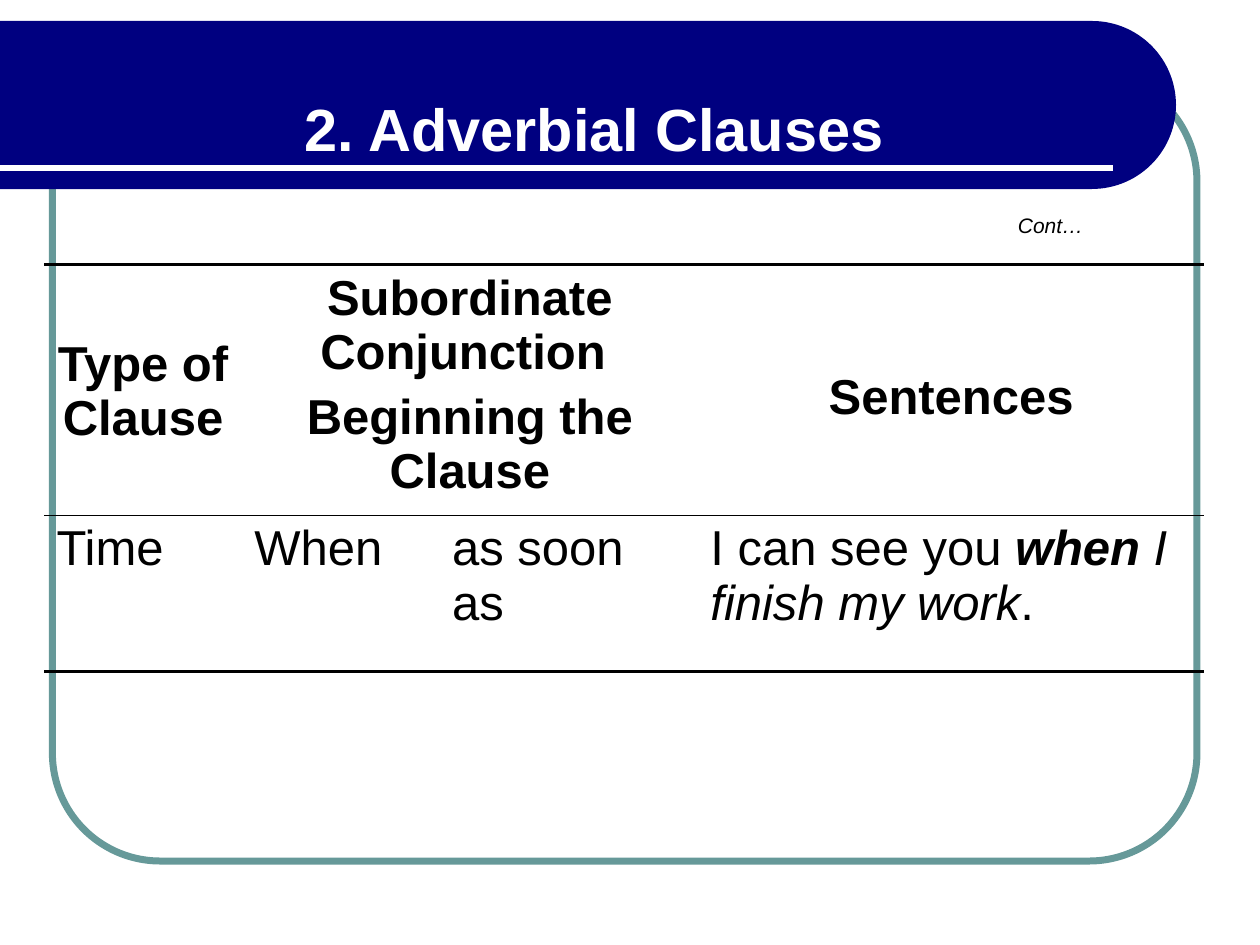
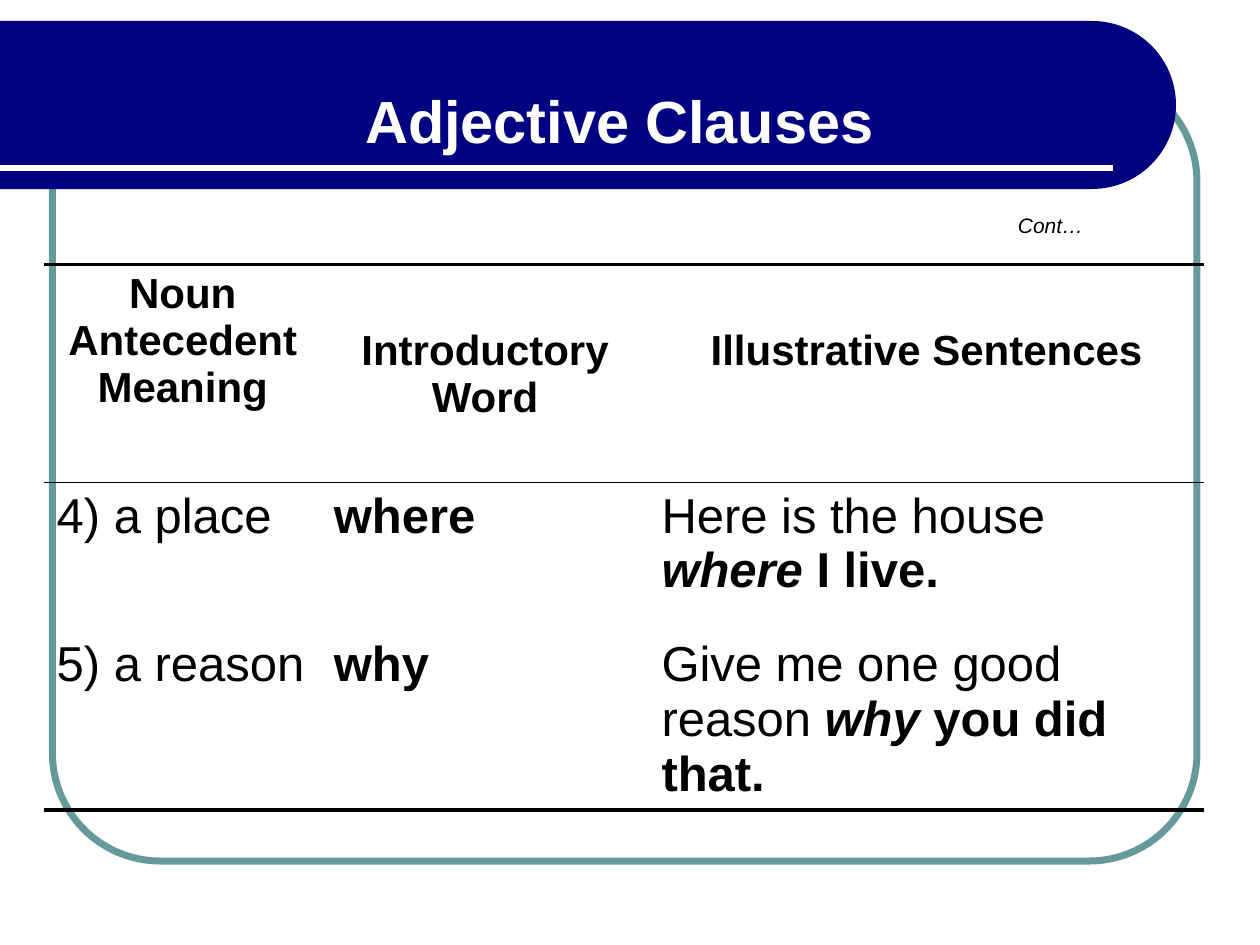
import math
import pptx
import pptx.util
import pptx.dml.color
import pptx.enum.shapes
import pptx.enum.text
import pptx.oxml
import pptx.oxml.ns

Pt = pptx.util.Pt
COLORS = {"band": "000080", "frame": "669999", "paper": "FFFFFF", "ink": "000000"}
RGB = {name: pptx.dml.color.RGBColor.from_string(value) for name, value in COLORS.items()}
FONT = "Arial"
THICK, THIN = 2.25, 1
CELL_MARGIN = 3.6
TABLE_LEFT, TABLE_TOP = 25.2, 151.2


def add_run(paragraph, text, size, color="ink", style=""):
    run = paragraph.add_run()
    run.text = text
    run.font.name = FONT
    run.font.size = Pt(size)
    run.font.bold = "b" in style
    run.font.italic = "i" in style
    run.font.color.rgb = RGB[color]


def border_xml(side, width):
    paint = "<a:noFill/>"
    if width:
        paint = f'<a:solidFill><a:srgbClr val="{COLORS["ink"]}"/></a:solidFill>'
    return pptx.oxml.parse_xml(
        f'<a:ln{side} {pptx.oxml.ns.nsdecls("a")} w="{Pt(width)}">{paint}</a:ln{side}>')


# Each cell: column, span, top offset, paragraphs of (text, style) runs
lessons = [
    {
        "title": "2. Adverbial Clauses", "title_box": (167, 49, 347, 48),
        "columns": [113, 113, 147.6, 289.4], "rows": [143.3, 89.3],
        "header_size": 28,
        "cells": [
            [(0, 1, 37.8, [[("Type of Clause", "b")]]),
             (1, 2, 0, [[("Subordinate Conjunction ", "b")],
                        [("Beginning the Clause", "b")]]),
             (3, 1, 57, [[("Sentences", "b")]])],
            [(0, 1, 0, [[("Time", "")]]),
             (1, 1, 0, [[("When", "")]]),
             (2, 1, 0, [[("as soon as", "")]]),
             (3, 1, 0, [[("I can see you ", ""), ("when ", "bi"),
                         ("I finish my work", "i"), (".", "")]])],
        ],
    },
    {
        "title": "Adjective Clauses", "title_box": (201.6, 44.6, 305.3, 48),
        "columns": [158.4, 187.2, 317.4], "rows": [124.6, 85, 102.2],
        "header_size": 24,
        "cells": [
            [(0, 1, 0, [[("Noun Antecedent Meaning", "b")]]),
             (1, 1, 32.4, [[("Introductory Word", "b")]]),
             (2, 1, 32.4, [[("Illustrative Sentences", "b")]])],
            [(0, 1, 0, [[("4) a place", "")]]),
             (1, 1, 0, [[("where", "b")]]),
             (2, 1, 0, [[("Here is the house ", ""), ("where ", "bi"), ("I live.", "b")]])],
            [(0, 1, 0, [[("5) a reason", "")]]),
             (1, 1, 0, [[("why", "b")]]),
             (2, 1, 0, [[("Give me one good reason ", ""), ("why ", "bi"),
                         ("you did that.", "b")]])],
        ],
    },
]

deck = pptx.Presentation()
deck.slide_width, deck.slide_height = Pt(720), Pt(540)

for lesson in lessons:
    slide = deck.slides.add_slide(deck.slide_layouts[6])
    slide.background.fill.solid()
    slide.background.fill.fore_color.rgb = RGB["paper"]

    # Rounded frame behind everything
    frame = slide.shapes.add_shape(pptx.enum.shapes.MSO_SHAPE.ROUNDED_RECTANGLE,
                                   Pt(30), Pt(42), Pt(654), Pt(450))
    frame.adjustments[0] = 0.137
    frame.shadow.inherit = False
    frame.fill.background()
    frame.line.color.rgb = RGB["frame"]
    frame.line.width = Pt(4)

    # Title band with a half-round right end
    radius, center_x, center_y = 48, 624, 60
    arc = [(center_x + radius * math.cos(math.radians(angle)),
            center_y + radius * math.sin(math.radians(angle)))
           for angle in range(-90, 91, 3)]
    outline = slide.shapes.build_freeform(0, Pt(center_y - radius))
    outline.add_line_segments([(Pt(x), Pt(y)) for x, y in arc]
                              + [(0, Pt(center_y + radius))], close=True)
    band = outline.convert_to_shape()
    band.shadow.inherit = False
    band.fill.solid()
    band.fill.fore_color.rgb = RGB["band"]
    band.line.fill.background()

    # Rule under the title
    rule = slide.shapes.add_connector(pptx.enum.shapes.MSO_CONNECTOR.STRAIGHT,
                                      0, Pt(96), Pt(636), Pt(96))
    rule.line.color.rgb = RGB["paper"]
    rule.line.width = Pt(3)
    rule._element.spPr.append(
        pptx.oxml.parse_xml(f'<a:effectLst {pptx.oxml.ns.nsdecls("a")}/>'))

    # Clause table
    columns, rows = lesson["columns"], lesson["rows"]
    clauses = slide.shapes.add_table(len(rows), len(columns), Pt(TABLE_LEFT), Pt(TABLE_TOP),
                                     Pt(sum(columns)), Pt(sum(rows))).table
    clauses.first_row = clauses.horz_banding = False
    for column, width in zip(clauses.columns, columns):
        column.width = Pt(width)
    for row, height in zip(clauses.rows, rows):
        row.height = Pt(height)

    for r, row_cells in enumerate(lesson["cells"]):
        size = lesson["header_size"] if r == 0 else 28
        for c, span, offset, paragraphs in row_cells:
            cell = clauses.cell(r, c)
            if span > 1:
                cell.merge(clauses.cell(r, c + span - 1))
            cell.margin_top = Pt(CELL_MARGIN + offset)
            for p, runs in enumerate(paragraphs):
                frame_text = cell.text_frame
                paragraph = frame_text.add_paragraph() if p else frame_text.paragraphs[0]
                if r == 0:
                    paragraph.alignment = pptx.enum.text.PP_ALIGN.CENTER
                paragraph.space_before = Pt(size * 0.2 if p else 0)
                for text, style in runs:
                    add_run(paragraph, text, size, style=style)

    # Horizontal borders only: thick outside, thin below the header
    edges = [THICK, THIN] + [0] * (len(rows) - 2) + [THICK]
    for r in range(len(rows)):
        for c in range(len(columns)):
            cell = clauses.cell(r, c)
            cell.fill.background()
            properties = cell._tc.get_or_add_tcPr()
            sides = [("L", 0), ("R", 0), ("T", edges[r]), ("B", edges[r + 1])]
            for place, (side, width) in enumerate(sides):
                properties.insert(place, border_xml(side, width))

    # Continuation mark and title
    labels = [("Cont…", (574.6, 118, 51.8, 21.6), 12, "ink", "i"),
              (lesson["title"], lesson["title_box"], 34, "paper", "b")]
    for text, box, size, color, style in labels:
        label = slide.shapes.add_textbox(*[Pt(length) for length in box]).text_frame
        label.word_wrap = False
        label.auto_size = pptx.enum.text.MSO_AUTO_SIZE.SHAPE_TO_FIT_TEXT
        add_run(label.paragraphs[0], text, size, color, style)

deck.save("out.pptx")
